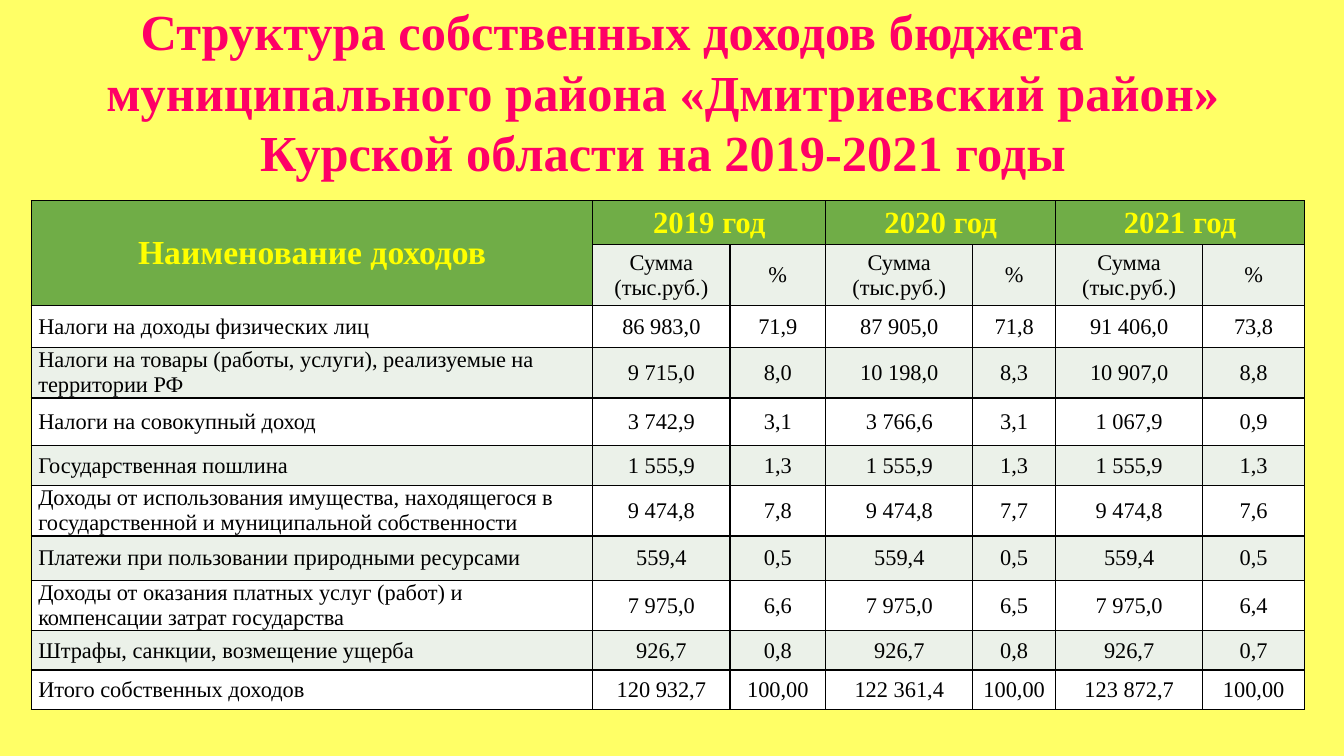
from dataclasses import dataclass

from lxml import etree
from pptx import Presentation
from pptx.dml.color import RGBColor
from pptx.enum.text import MSO_ANCHOR, PP_ALIGN
from pptx.oxml.ns import qn
from pptx.util import Inches, Pt

MIDDLE = MSO_ANCHOR.MIDDLE
CENTER, LEFT = PP_ALIGN.CENTER, PP_ALIGN.LEFT

TITLE = ("Структура собственных доходов бюджета\v"
         "муниципального района «Дмитриевский район»\v"
         "Курской области на 2019-2021 годы")
YEARS = ("2019 год", "2020 год", "2021 год")
INCOME = [
    ("Налоги на доходы физических лиц", "86 983,0", "71,9", "87 905,0", "71,8", "91 406,0", "73,8"),
    ("Налоги на товары (работы, услуги), реализуемые на территории РФ",
     "9 715,0", "8,0", "10 198,0", "8,3", "10 907,0", "8,8"),
    ("Налоги на совокупный доход", "3 742,9", "3,1", "3 766,6", "3,1", "1 067,9", "0,9"),
    ("Государственная пошлина", "1 555,9", "1,3", "1 555,9", "1,3", "1 555,9", "1,3"),
    ("Доходы от использования имущества, находящегося в государственной и муниципальной собственности",
     "9 474,8", "7,8", "9 474,8", "7,7", "9 474,8", "7,6"),
    ("Платежи при пользовании природными ресурсами", "559,4", "0,5", "559,4", "0,5", "559,4", "0,5"),
    ("Доходы от оказания платных услуг (работ) и компенсации затрат государства",
     "7 975,0", "6,6", "7 975,0", "6,5", "7 975,0", "6,4"),
    ("Штрафы, санкции, возмещение ущерба", "926,7", "0,8", "926,7", "0,8", "926,7", "0,7"),
    ("Итого собственных доходов", "120 932,7", "100,00", "122 361,4", "100,00", "123 872,7", "100,00"),
]
COLUMN_WIDTHS = (5.57, 1.36, 0.95, 1.46, 0.82, 1.46, 1.01)
ROW_HEIGHTS = (0.43, 0.6, 0.42, 0.5, 0.47, 0.4, 0.5, 0.44, 0.5, 0.39, 0.39)


@dataclass(frozen=True)
class Theme:
    """Colours, font and type sizes of the slide."""
    font: str = "Times New Roman"
    background: str = "FFFF66"
    title: str = "FF0066"
    line: str = "000000"
    text: str = "000000"
    header: str = "70AD47"
    header_text: str = "FFFF00"
    band: str = "EBF1E9"
    plain: str = "FFFFFF"
    title_size: int = 36
    name_size: int = 24
    year_size: int = 22
    body_size: int = 16


class Page:
    """Holds the theme and the current slide and draws its elements."""

    def __init__(self, deck, theme):
        """Add a title-only slide with a plain background."""
        self.theme = theme
        self.slide = deck.slides.add_slide(deck.slide_layouts[5])
        fill = self.slide.background.fill
        fill.solid()
        fill.fore_color.rgb = RGBColor.from_string(theme.background)

    def style(self, para, size, color, bold=False, align=CENTER):
        """Format a paragraph."""
        para.alignment = align
        font = para.font
        font.name, font.size, font.bold = self.theme.font, Pt(size), bold
        font.color.rgb = RGBColor.from_string(color)

    def line(self, parent, tag, width, position):
        """Insert a solid line of the theme colour."""
        line = etree.Element(qn(tag), w=str(Pt(width)))
        fill = etree.SubElement(line, qn("a:solidFill"))
        etree.SubElement(fill, qn("a:srgbClr"), val=self.theme.line)
        parent.insert(position, line)

    def title(self, text, left, top, width, height):
        """Place the outlined title, its first line hanging to the left."""
        box = self.slide.shapes.title
        box.left, box.top = Inches(left), Inches(top)
        box.width, box.height = Inches(width), Inches(height)
        frame = box.text_frame
        frame.text = text
        frame.word_wrap = True
        frame.vertical_anchor = MIDDLE
        frame.margin_left, frame.margin_right = 0, Inches(1.18)
        para = frame.paragraphs[0]
        self.style(para, self.theme.title_size, self.theme.title, True)
        properties = para._p.get_or_add_pPr()
        properties.set("marL", str(Inches(1)))
        properties.set("indent", str(-Inches(1)))
        for span in para.runs:
            self.line(span._r.get_or_add_rPr(), "a:ln", 0.75, 0)

    def cell(self, cell, text, fill, size, color, bold=False, align=CENTER):
        """Fill and format one table cell."""
        cell.text = text
        cell.vertical_anchor = MIDDLE
        cell.fill.solid()
        cell.fill.fore_color.rgb = RGBColor.from_string(fill)
        self.style(cell.text_frame.paragraphs[0], size, color, bold, align)

    def table(self, left, top, widths, heights):
        """Add a table with thin borders around every cell."""
        frame = self.slide.shapes.add_table(
            len(heights), len(widths), Inches(left), Inches(top),
            Inches(sum(widths)), Inches(sum(heights)))
        table = frame.table
        for column, width in zip(table.columns, widths):
            column.width = Inches(width)
        for row, height in zip(table.rows, heights):
            row.height = Inches(height)
        for cell in table.iter_cells():
            properties = cell._tc.get_or_add_tcPr()
            for position, tag in enumerate(("a:lnL", "a:lnR", "a:lnT", "a:lnB")):
                self.line(properties, tag, 1, position)
        return table

    def header(self, table):
        """Write the two header rows."""
        theme = self.theme
        table.cell(0, 0).merge(table.cell(1, 0))
        self.cell(table.cell(0, 0), "Наименование доходов", theme.header,
                  theme.name_size, theme.header_text, True)
        for index, year in enumerate(YEARS):
            column = 1 + 2 * index
            table.cell(0, column).merge(table.cell(0, column + 1))
            self.cell(table.cell(0, column), year, theme.header,
                      theme.year_size, theme.header_text, True)
            for offset, label in enumerate(("Сумма (тыс.руб.)", "%")):
                self.cell(table.cell(1, column + offset), label, theme.band,
                          theme.body_size, theme.text)

    def body(self, table, records):
        """Write the banded income rows below the header."""
        theme = self.theme
        for row, record in enumerate(records, 2):
            fill = theme.band if row % 2 else theme.plain
            for column, text in enumerate(record):
                cell = table.cell(row, column)
                cell.margin_left = cell.margin_right = Inches(0.07)
                cell.margin_top = cell.margin_bottom = 0
                self.cell(cell, text, fill, theme.body_size, theme.text,
                          align=CENTER if column else LEFT)


def main():
    """Build and save the deck."""
    deck = Presentation()
    deck.slide_width, deck.slide_height = Inches(13.33), Inches(7.5)
    page = Page(deck, Theme())
    page.title(TITLE, 0, 0, 13.33, 1.81)
    table = page.table(0.31, 1.99, COLUMN_WIDTHS, ROW_HEIGHTS)
    page.header(table)
    page.body(table, INCOME)
    deck.save("out.pptx")


if __name__ == "__main__":
    main()
